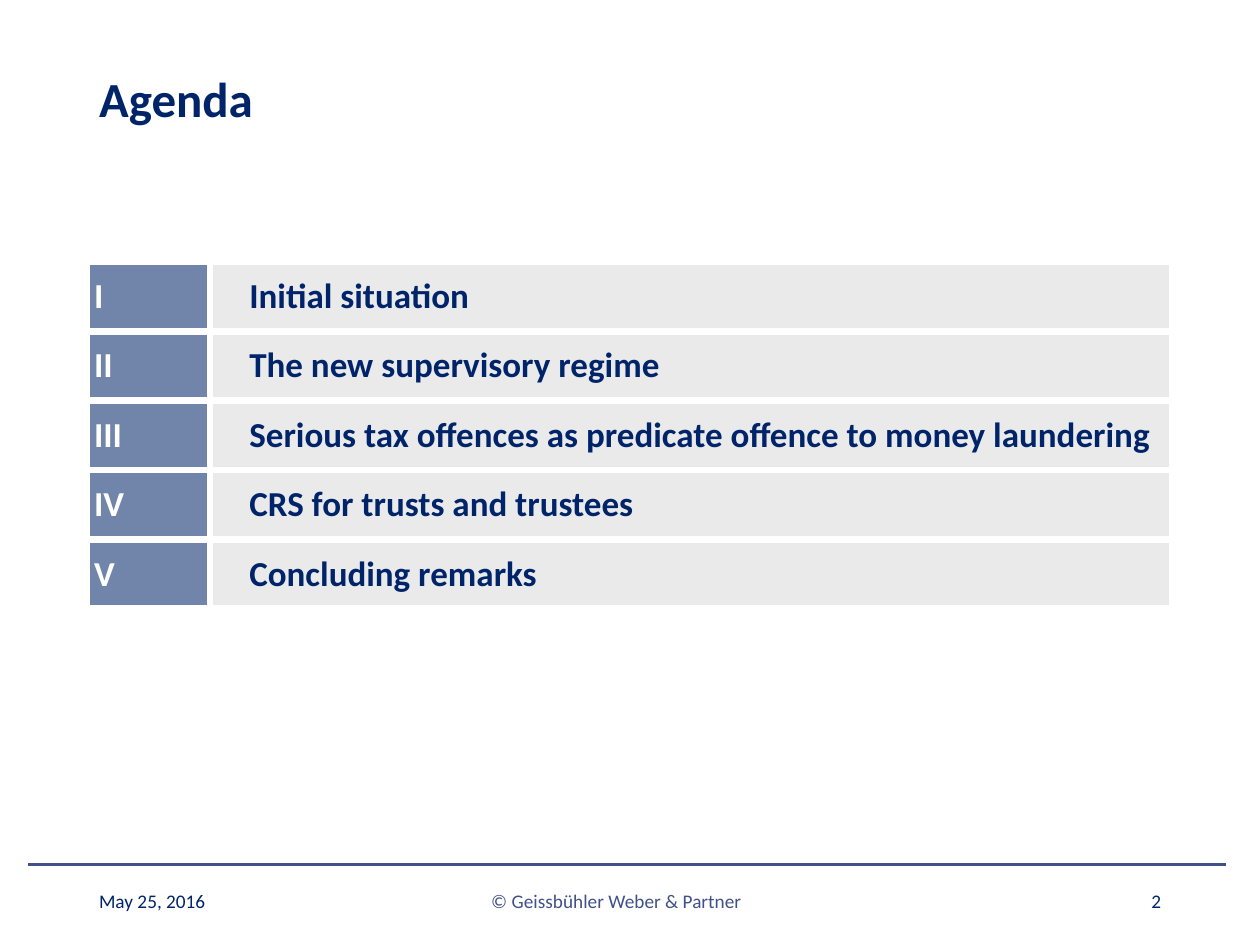
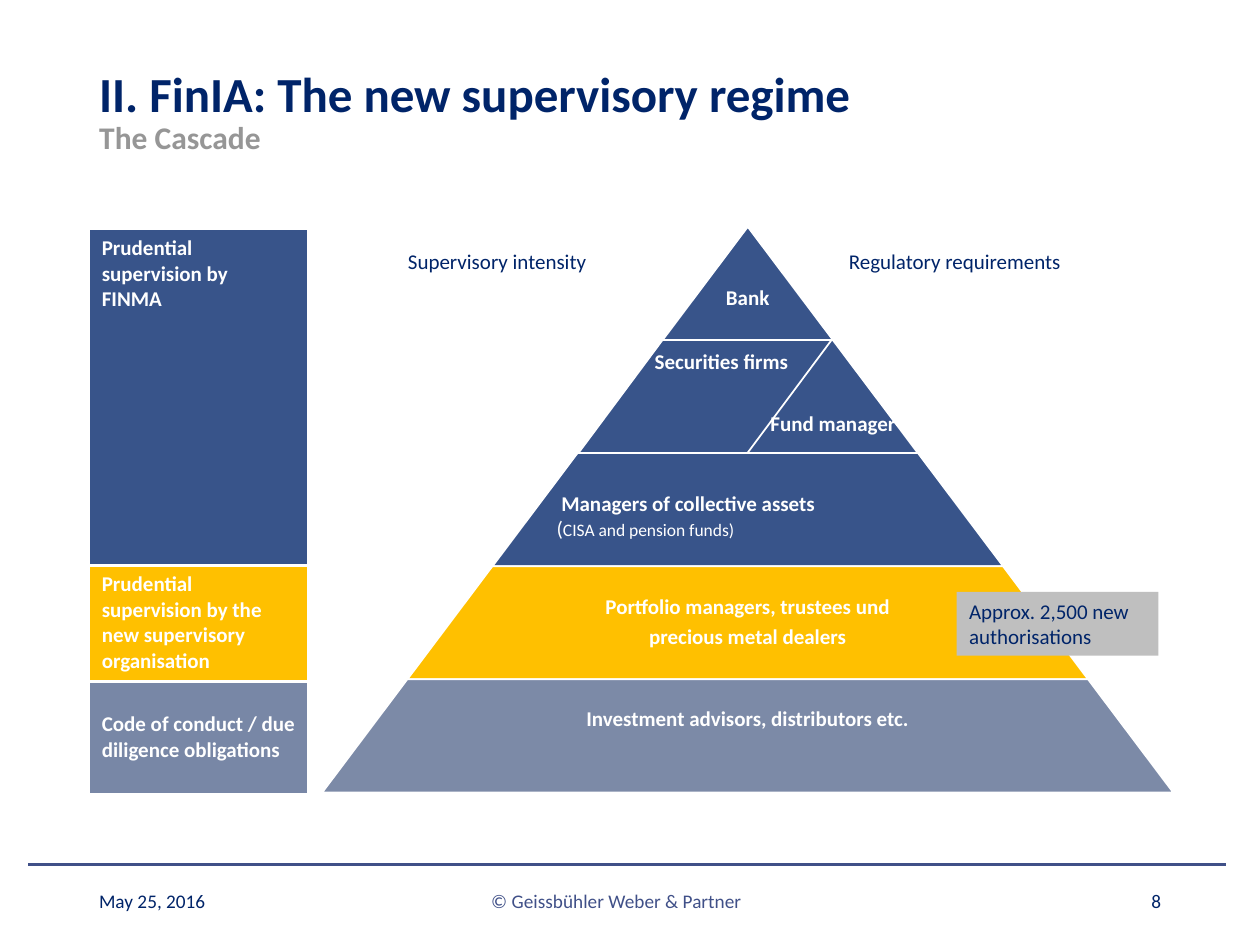
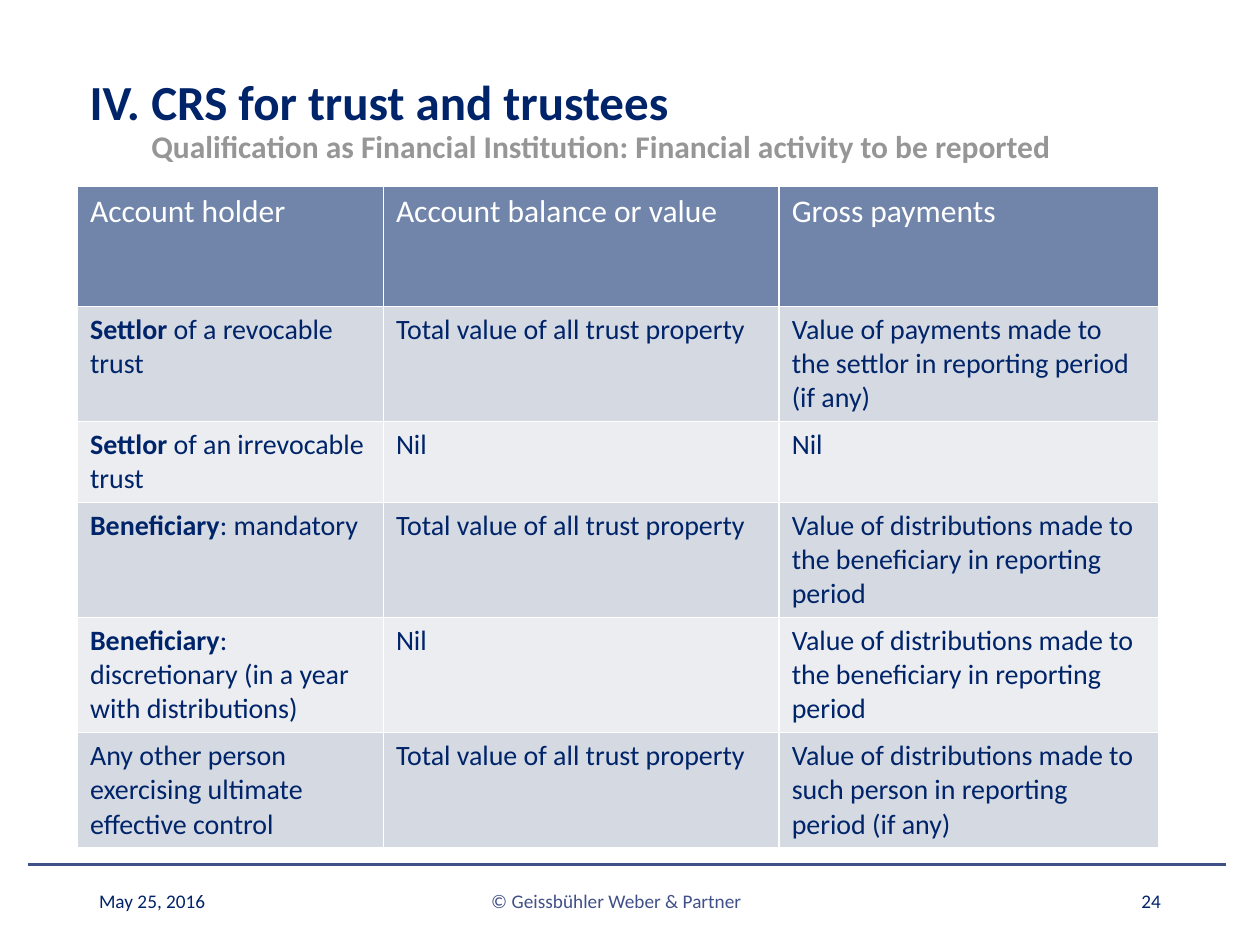
"""Build three slides on Swiss financial supervision: agenda, supervisory cascade and CRS reporting."""
import copy
from dataclasses import dataclass

import pptx
import pptx.dml.color
import pptx.enum.shapes
import pptx.enum.text
import pptx.oxml
import pptx.oxml.ns
import pptx.util

Pt = pptx.util.Pt
ALIGN = pptx.enum.text.PP_ALIGN
ANCHOR = pptx.enum.text.MSO_ANCHOR
SHAPE = pptx.enum.shapes.MSO_SHAPE
qn = pptx.oxml.ns.qn


@dataclass(frozen=True)
class Theme:
    font: str = "Calibri"
    navy: str = "002469"
    rule: str = "405088"
    subtitle: str = "969696"
    white: str = "FFFFFF"
    header: str = "7185AB"
    pale: str = "EAEAEA"
    finma: str = "38548A"
    amber: str = "FFC000"
    slate: str = "7C8AA7"
    slate_cell: str = "7887A6"
    callout: str = "BFBFBF"
    bands: tuple = ("D5D9E2", "EBEDF1")
    title_size: float = 28
    agenda_size: float = 20
    subtitle_size: float = 18
    table_size: float = 16
    label_size: float = 12
    footer_size: float = 11
    note_size: float = 10


theme = Theme()
rgb = pptx.dml.color.RGBColor.from_string


def format_text(frame, size, color, bold=False, align=ALIGN.LEFT, anchor=ANCHOR.TOP, spacing=None):
    """Give all runs and line breaks of a text frame one look."""
    frame.word_wrap = True
    frame.vertical_anchor = anchor
    for paragraph in frame.paragraphs:
        paragraph.alignment = align
        paragraph.line_spacing = spacing
        for run in paragraph.runs:
            run.font.name = theme.font
            run.font.size = Pt(size)
            run.font.bold = bold
            run.font.color.rgb = rgb(color)
        for line_break in paragraph._p.findall(qn("a:br")):
            line_break.append(copy.deepcopy(paragraph.runs[0]._r.rPr))


def style_cell(cell, fill, border, sides="LRTB"):
    """Draw white borders on the given sides of a cell and fill it."""
    properties = cell._tc.get_or_add_tcPr()
    for side in sides:
        properties.append(pptx.oxml.parse_xml(
            f'<a:ln{side} {pptx.oxml.ns.nsdecls("a")} w="{Pt(border)}"><a:solidFill>'
            f'<a:srgbClr val="{theme.white}"/></a:solidFill></a:ln{side}>'))
    cell.fill.solid()
    cell.fill.fore_color.rgb = rgb(fill)


presentation = pptx.Presentation()
presentation.slide_width = Pt(720)
presentation.slide_height = Pt(540)

pages = [
    ("Agenda", "2", (49.5, 5.8, 527, 104.4), 0),
    ("II. FinIA: The new supervisory regime\vThe Cascade", "8", (49.5, 28, 555, 73.4), 0),
    ("IV.\tCRS for trust and trustees\v"
     "Qualification as Financial Institution: Financial activity to be reported",
     "24", (44, 25.2, 566, 88.6), 35.3),
]
slides = []
for title_text, number, (left, top, width, height), hanging in pages:
    slide = presentation.slides.add_slide(presentation.slide_layouts[5])
    slides.append(slide)

    rule = slide.shapes.add_connector(
        pptx.enum.shapes.MSO_CONNECTOR.STRAIGHT, Pt(700.5), Pt(494), Pt(16), Pt(494))
    rule.line.color.rgb = rgb(theme.rule)
    rule.line.width = Pt(1.5)
    rule._element.spPr.append(pptx.oxml.parse_xml(f'<a:effectLst {pptx.oxml.ns.nsdecls("a")}/>'))

    title = slide.shapes.title
    title.left, title.top, title.width, title.height = Pt(left), Pt(top), Pt(width), Pt(height)
    title.text_frame.text = title_text
    title.text_frame.auto_size = pptx.enum.text.MSO_AUTO_SIZE.NONE
    format_text(title.text_frame, theme.title_size, theme.navy, True,
                anchor=ANCHOR.MIDDLE, spacing=0.9)
    paragraph = title.text_frame.paragraphs[0]
    for run in paragraph.runs[1:]:
        run.font.size = Pt(theme.subtitle_size)
        run.font.color.rgb = rgb(theme.subtitle)
    if hanging:
        paragraph_properties = paragraph._p.get_or_add_pPr()
        paragraph_properties.set("marL", str(Pt(hanging)))
        paragraph_properties.set("indent", str(-Pt(hanging)))

    footers = [
        ("May 25, 2016", 49.5, 162, theme.navy, ALIGN.LEFT),
        ("© Geissbühler Weber & Partner", 222, 260.5, theme.rule, ALIGN.CENTER),
        (number, 508.5, 162, theme.navy, ALIGN.RIGHT),
    ]
    for text, left, width, color, align in footers:
        footer = slide.shapes.add_textbox(Pt(left), Pt(500.5), Pt(width), Pt(29))
        footer.text_frame.text = text
        format_text(footer.text_frame, theme.footer_size, color, align=align, anchor=ANCHOR.MIDDLE)

agenda_slide, cascade_slide, reporting_slide = slides

agenda = [
    ("I", "Initial situation"),
    ("II", "The new supervisory regime"),
    ("III", "Serious tax offences as predicate offence to money laundering"),
    ("IV", "CRS for trusts and trustees"),
    ("V", "Concluding remarks"),
]
agenda_table = agenda_slide.shapes.add_table(
    len(agenda), 2, Pt(49.5), Pt(149.5), Pt(620.5), Pt(198.5)).table
agenda_table.first_row = agenda_table.horz_banding = False
agenda_columns = [(70.5, theme.header, theme.white, 4.3), (550, theme.pale, theme.navy, 22.5)]
for column, (width, fill, color, margin) in enumerate(agenda_columns):
    agenda_table.columns[column].width = Pt(width)
    for row, entry in enumerate(agenda):
        agenda_table.rows[row].height = Pt(39.7)
        cell = agenda_table.cell(row, column)
        style_cell(cell, fill, 4.5)
        cell.margin_left = Pt(margin)
        cell.text_frame.text = entry[column]
        format_text(cell.text_frame, theme.agenda_size, color, True)
        cell.vertical_anchor = ANCHOR.MIDDLE

apex, pyramid_top, level_height, level_inset = 427.3, 129.6, 64.65, 48.63
levels = [
    (theme.finma, "Bank", 9),
    (theme.finma, "", 0),
    (theme.finma, "", 0),
    (theme.amber, "Portfolio managers, trustees und\nprecious metal dealers", 0),
    (theme.slate, "Investment advisors, distributors etc.", -9),
]
outlines = [
    (SHAPE.TRAPEZOID, apex - level_inset * (level + 1), pyramid_top + level_height * level,
     2 * level_inset * (level + 1), level_inset / level_height, fill)
    for level, (fill, label, shift) in enumerate(levels)
]
outlines.append((SHAPE.PARALLELOGRAM, 330.5, pyramid_top + level_height, 144.7, 0.744, theme.finma))
for preset, left, top, width, adjustment, fill in outlines:
    tier = cascade_slide.shapes.add_shape(preset, Pt(left), Pt(top), Pt(width), Pt(level_height))
    tier.adjustments[0] = adjustment
    tier.shadow.inherit = False
    tier.fill.solid()
    tier.fill.fore_color.rgb = rgb(fill)
    tier.line.color.rgb = rgb(theme.white)
    tier.line.width = Pt(1)

for level, (fill, label, shift) in enumerate(levels):
    if label:
        box = cascade_slide.shapes.add_textbox(
            Pt(apex - 158), Pt(pyramid_top + level_height * level + shift), Pt(316), Pt(level_height))
        box.text_frame.text = label
        format_text(box.text_frame, theme.label_size, theme.white, True,
                    ALIGN.CENTER, ANCHOR.MIDDLE, 0.9)
        for paragraph in box.text_frame.paragraphs[1:]:
            paragraph.space_before = Pt(4.2)

sidebar = [
    ("Prudential supervision by\vFINMA", 192.2, theme.finma, "RB", ANCHOR.TOP),
    ("Prudential supervision by the new supervisory organisation", 66.2, theme.amber, "RTB", ANCHOR.TOP),
    ("Code of conduct / due diligence obligations", 64.1, theme.slate_cell, "RT", ANCHOR.MIDDLE),
]
sidebar_table = cascade_slide.shapes.add_table(
    len(sidebar), 1, Pt(51), Pt(131), Pt(125.5), Pt(322.5)).table
sidebar_table.first_row = sidebar_table.horz_banding = False
for row, (text, height, fill, sides, anchor) in enumerate(sidebar):
    sidebar_table.rows[row].height = Pt(height)
    cell = sidebar_table.cell(row, 0)
    style_cell(cell, fill, 2.25, sides)
    cell.text_frame.text = text
    format_text(cell.text_frame, theme.label_size, theme.white, True)
    cell.vertical_anchor = anchor

callout = cascade_slide.shapes.add_shape(SHAPE.RECTANGLE, Pt(546.7), Pt(338.3), Pt(115.3), Pt(36.4))
callout.shadow.inherit = False
callout.fill.solid()
callout.fill.fore_color.rgb = rgb(theme.callout)
callout.line.fill.background()
callout.text_frame.text = "Approx. 2,500 new authorisations"
format_text(callout.text_frame, theme.label_size, theme.navy)

labels = [
    ("Supervisory intensity", 226, 138.5, 137, theme.navy, False),
    ("Regulatory requirements", 478, 138.5, 172, theme.navy, False),
    ("Fund manager", 433.2, 231, 95, theme.white, True),
    ("Securities firms", 367, 195.8, 116, theme.white, True),
    ("Managers of collective assets\v(", 311, 276.5, 245, theme.white, True),
]
for text, left, top, width, color, bold in labels:
    box = cascade_slide.shapes.add_textbox(Pt(left), Pt(top), Pt(width), Pt(21.8))
    box.text_frame.text = text
    format_text(box.text_frame, theme.label_size, color, bold)

managers = box.text_frame.paragraphs[0]
managers._p.get_or_add_pPr().set("indent", str(Pt(2.7)))
managers.runs[1].font.bold = False
note = managers.add_run()
note.text = "CISA and pension funds)"
note.font.name = theme.font
note.font.size = Pt(theme.note_size)
note.font.color.rgb = rgb(theme.white)

whole_trust = "Total value of all trust property"
distributions = "Value of distributions made to the beneficiary in reporting period"
reporting = [
    (68.4, ("", "Account holder"), "Account balance or value", "Gross payments"),
    (65.8, ("Settlor", " of a revocable trust"), whole_trust,
     "Value of payments made to the settlor in reporting period (if any)"),
    (46.3, ("Settlor", " of an irrevocable trust"), "Nil", "Nil"),
    (65.8, ("Beneficiary", ": mandatory"), whole_trust, distributions),
    (65.8, ("Beneficiary", ": discretionary (in a year with distributions)"), "Nil", distributions),
    (65.8, ("", "Any other person exercising ultimate effective control"), whole_trust,
     "Value of distributions made to such person in reporting period (if any)"),
]
reporting_table = reporting_slide.shapes.add_table(
    len(reporting), 3, Pt(44.3), Pt(106.6), Pt(617.7), Pt(377.9)).table
reporting_table.first_row = reporting_table.horz_banding = False
for column, width in enumerate((174.8, 226.2, 216.7)):
    reporting_table.columns[column].width = Pt(width)
for row, (height, (lead, holder), balance, payments) in enumerate(reporting):
    reporting_table.rows[row].height = Pt(height)
    if row == 0:
        fill, size, color = theme.header, theme.subtitle_size, theme.white
    else:
        fill, size, color = theme.bands[(row - 1) % 2], theme.table_size, theme.navy
    for column, text in enumerate((lead or holder, balance, payments)):
        cell = reporting_table.cell(row, column)
        style_cell(cell, fill, 1)
        cell.text_frame.text = text
        paragraph = cell.text_frame.paragraphs[0]
        has_lead = column == 0 and lead
        if has_lead:
            paragraph.add_run().text = holder
        format_text(cell.text_frame, size, color)
        if has_lead:
            paragraph.runs[0].font.bold = True

presentation.save("out.pptx")
